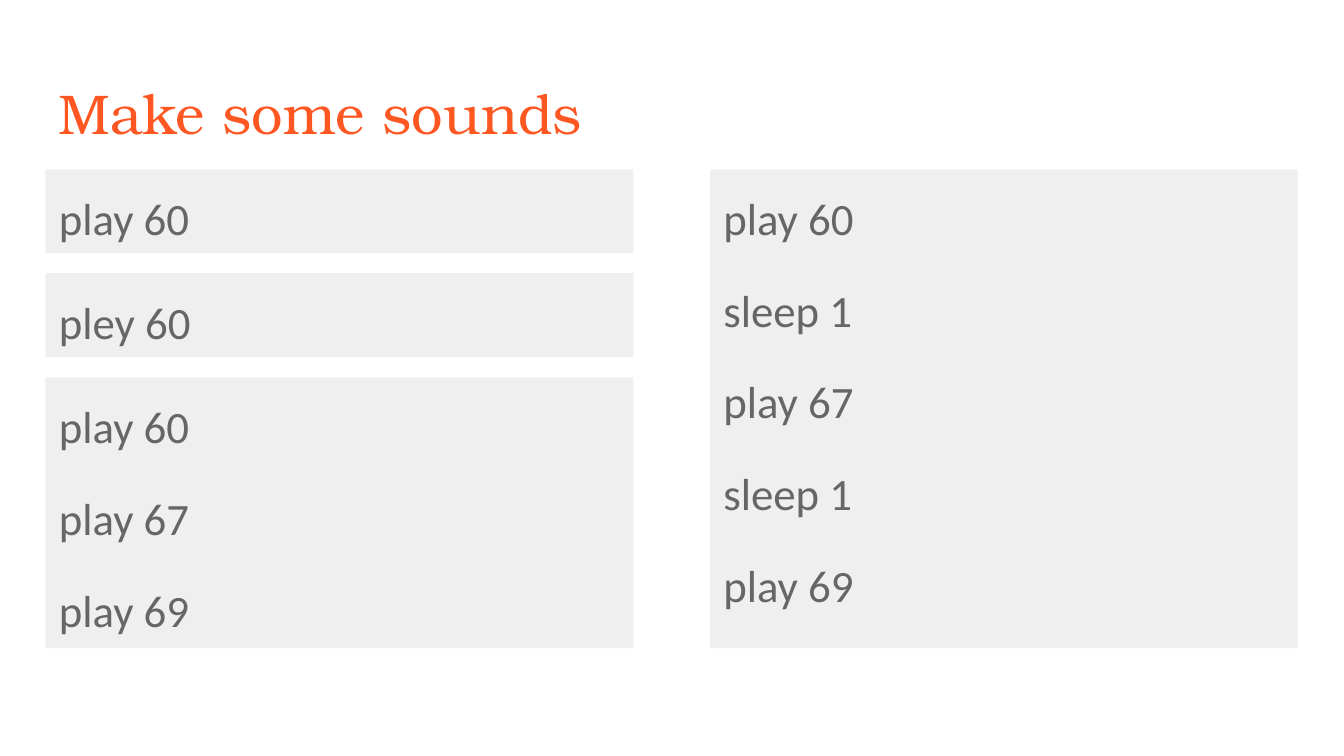
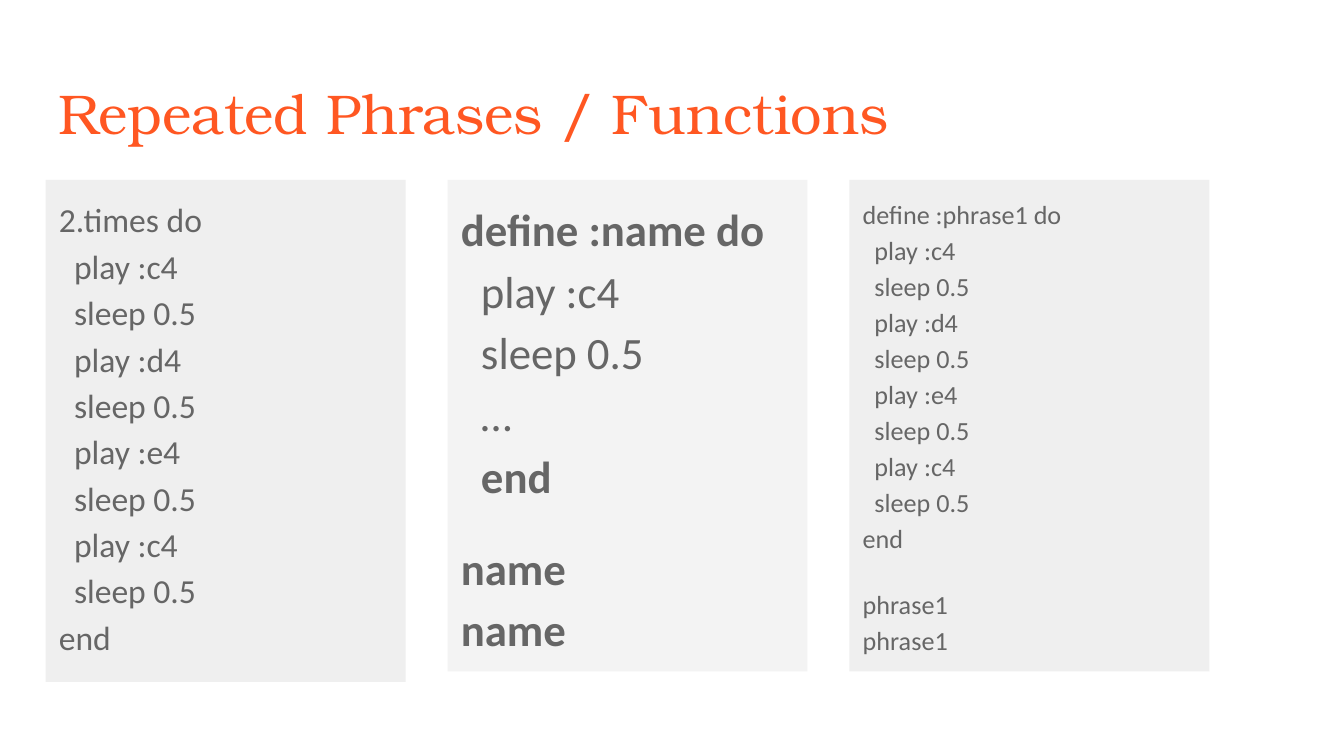
import pptx
import pptx.util
import pptx.dml.color
import pptx.enum.shapes
import pptx.enum.text

Pt = pptx.util.Pt
Color = pptx.dml.color.RGBColor.from_string

theme = {
    "title": {"name": "TeX Gyre Bonum", "size": Pt(30), "color": "FF5722"},
    "code": {"name": "Calibri", "color": "666666"},
    "large": 24, "medium": 18, "small": 14,
    "panel": "EFEFEF", "panel_light": "F3F3F3", "background": "FFFFFF",
    "line_spacing": 1.15, "block_gap": 16, "indent_ratio": 0.45,
    "margin": 24.5, "inset": 7.2,
}

presentation = pptx.Presentation()
presentation.slide_width, presentation.slide_height = Pt(720), Pt(405)


def add_text(shape, paragraphs, font_format):
    """Fill a shape with (text, paragraph format, indent, bold) entries."""
    frame = shape.text_frame
    inset = Pt(theme["inset"])
    frame_format = {
        "word_wrap": True, "vertical_anchor": pptx.enum.text.MSO_ANCHOR.TOP,
        "margin_left": inset, "margin_right": inset,
        "margin_top": inset, "margin_bottom": inset,
    }
    for name, value in frame_format.items():
        setattr(frame, name, value)
    for index, (text, paragraph_format, indent, bold) in enumerate(paragraphs):
        paragraph = frame.add_paragraph() if index else frame.paragraphs[0]
        paragraph.alignment = pptx.enum.text.PP_ALIGN.LEFT
        for name, value in paragraph_format.items():
            setattr(paragraph, name, value)
        if indent:
            paragraph._p.get_or_add_pPr().set("marL", str(Pt(indent)))
        run = paragraph.add_run()
        run.text = text
        for name, value in font_format.items():
            if name == "color":
                run.font.color.rgb = Color(value)
            else:
                setattr(run.font, name, value)
        run.font.bold = bold


def add_code_panel(slide, box, blocks, size, fill):
    """Draw a panel of code blocks, each a list of (text, level, bold) lines."""
    panel = slide.shapes.add_shape(
        pptx.enum.shapes.MSO_SHAPE.RECTANGLE, *[Pt(length) for length in box])
    panel.shadow.inherit = False
    panel.fill.solid()
    panel.fill.fore_color.rgb = Color(fill)
    panel.line.fill.background()
    paragraphs = []
    for block in blocks:
        for number, (text, level, bold) in enumerate(block, start=1):
            gap = theme["block_gap"] if number == len(block) else 0
            spacing = {"line_spacing": theme["line_spacing"],
                       "space_before": Pt(0), "space_after": Pt(gap)}
            indent = level * theme["indent_ratio"] * size
            paragraphs.append((text, spacing, indent, bold))
    add_text(panel, paragraphs, {**theme["code"], "size": Pt(size)})


# Slides with their titles
slides = []
for title in ("Make some sounds", "Repeated Phrases / Functions"):
    slide = presentation.slides.add_slide(presentation.slide_layouts[6])
    slide.background.fill.solid()
    slide.background.fill.fore_color.rgb = Color(theme["background"])
    title_box = slide.shapes.add_textbox(Pt(theme["margin"]), Pt(35), Pt(671), Pt(45.4))
    add_text(title_box, [(title, {}, 0, False)], theme["title"])
    slides.append(slide)
sounds_slide, functions_slide = slides

# First sounds: every command is a block of its own
left_column, right_column, sound_width = theme["margin"], 380.4, 314.8
sound_panels = [
    (left_column, 90.7, 45, ["play 60"]),
    (left_column, 146.4, 45, ["pley 60"]),
    (left_column, 202.2, 145, ["play 60", "play 67", "play 69"]),
    (right_column, 90.7, 256.5,
     ["play 60", "sleep 1", "play 67", "sleep 1", "play 69"]),
]
for left, top, height, commands in sound_panels:
    blocks = [[(command, 0, False)] for command in commands]
    add_code_panel(sounds_slide, (left, top, sound_width, height), blocks,
                   theme["large"], theme["panel"])

# The phrase that is repeated and then named
phrase = []
for note in ("c4", "d4", "e4", "c4"):
    phrase += [(f"play :{note}", 1, False), ("sleep 0.5", 1, False)]
end = ("end", 0, False)

loop_code = [[("2.times do", 0, False), *phrase, end]]
pattern_code = [
    [("define :name do", 0, True), *phrase[:2], ("…", 1, False), ("end", 1, True)],
    [("name", 0, True)] * 2,
]
function_code = [
    [("define :phrase1 do", 0, False), *phrase, end],
    [("phrase1", 0, False)] * 2,
]

# Three columns of equal width
column_width, column_pitch, column_top = 192.8, 215.3, 96.4
columns = [
    (loop_code, 269, theme["medium"], theme["panel"]),
    (pattern_code, 263.3, theme["large"], theme["panel_light"]),
    (function_code, 263.3, theme["small"], theme["panel"]),
]
for column, (blocks, height, size, fill) in enumerate(columns):
    left = theme["margin"] + column * column_pitch
    add_code_panel(functions_slide, (left, column_top, column_width, height),
                   blocks, size, fill)

presentation.save("out.pptx")
